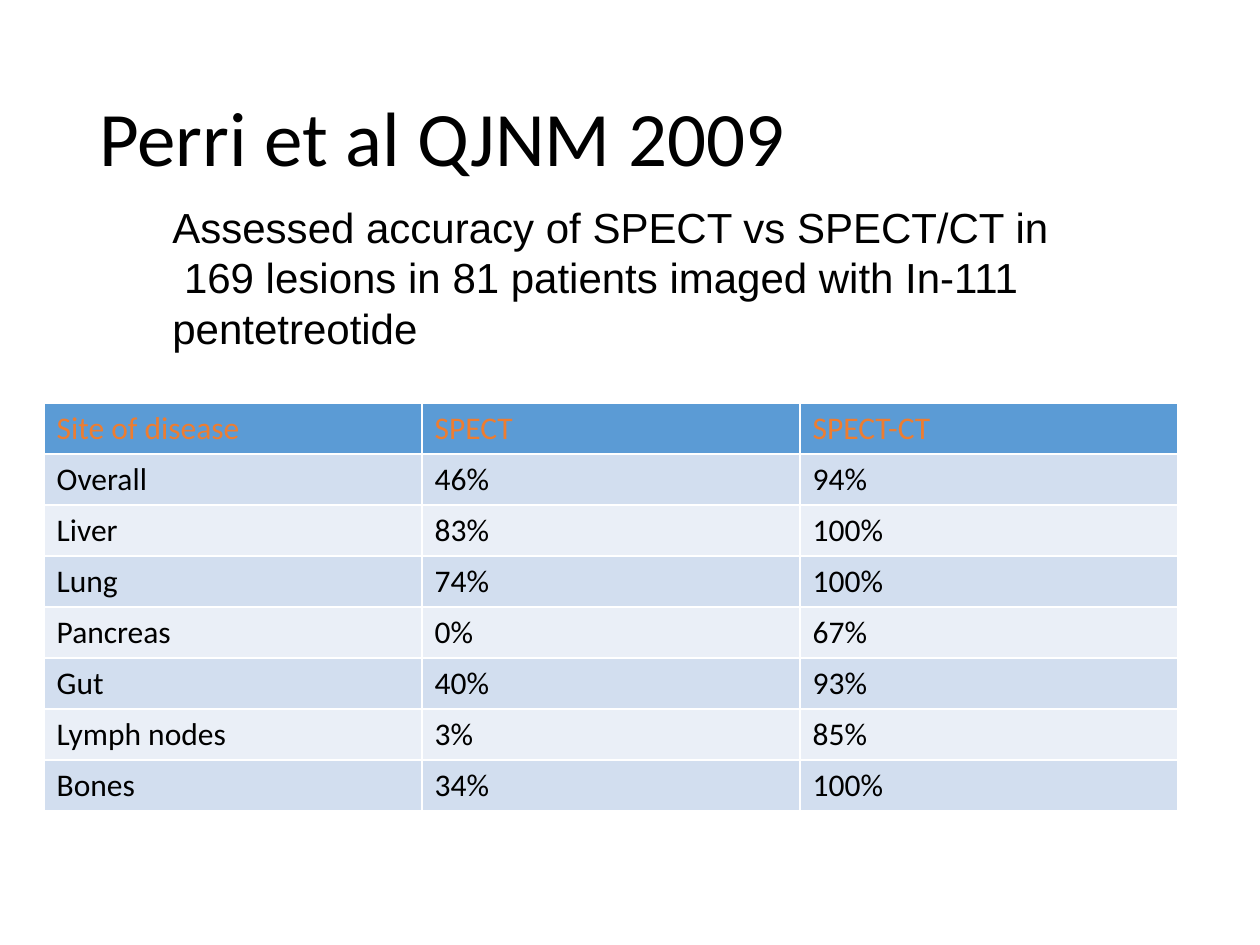
from dataclasses import dataclass

from pptx import Presentation
from pptx.dml.color import RGBColor
from pptx.enum.text import MSO_ANCHOR
from pptx.slide import Slide
from pptx.util import Inches, Pt


def rgb(value):
    return RGBColor.from_string(value)


@dataclass
class SlideBuilder:
    """Hold the style and the current slide, and add its elements."""

    s: Slide
    font: str = "Calibri"
    ink: str = "000000"
    accent: str = "ED7D31"
    header: str = "5B9BD5"
    bands: tuple = ("D2DEEF", "EAEFF7")

    def style(self, p, size, color, font=None):
        p.font.name = font or self.font
        p.font.size = Pt(size)
        p.font.bold = False
        p.font.color.rgb = rgb(color)

    def text(self, text, box, size, font=None, anchor=MSO_ANCHOR.TOP, spacing=1.0):
        tf = self.s.shapes.add_textbox(*map(Inches, box)).text_frame
        tf.word_wrap = True
        tf.vertical_anchor = anchor
        p = tf.paragraphs[0]
        p.text = text
        p.line_spacing = spacing
        self.style(p, size, self.ink, font)

    def table(self, rows, box):
        shape = self.s.shapes.add_table(len(rows), len(rows[0]), *map(Inches, box))
        for i, row in enumerate(rows):
            fill = self.bands[(i - 1) % 2] if i else self.header
            for j, value in enumerate(row):
                cell = shape.table.cell(i, j)
                cell.text = value
                cell.fill.solid()
                cell.fill.fore_color.rgb = rgb(fill)
                p = cell.text_frame.paragraphs[0]
                self.style(p, 18, self.ink if i else self.accent)


def main():
    prs = Presentation()
    prs.slide_width, prs.slide_height = Inches(10), Inches(7.5)
    slide = SlideBuilder(prs.slides.add_slide(prs.slide_layouts[6]))
    slide.text("Perri et al QJNM 2009", (0.69, 0.4, 8.62, 1.45), 44,
               anchor=MSO_ANCHOR.MIDDLE, spacing=0.9)
    accuracy = [
        ("Site of disease", "SPECT", "SPECT-CT"),
        ("Overall", "46%", "94%"),
        ("Liver", "83%", "100%"),
        ("Lung", "74%", "100%"),
        ("Pancreas", "0%", "67%"),
        ("Gut", "40%", "93%"),
        ("Lymph nodes", "3%", "85%"),
        ("Bones", "34%", "100%"),
    ]
    slide.table(accuracy, (0.35, 3.2, 9, 3.24))
    slide.text("Assessed accuracy of SPECT vs SPECT/CT in\v"
               " 169 lesions in 81 patients imaged with In-111 pentetreotide",
               (1.27, 1.55, 7.17, 1.31), 24, font="Arial")
    prs.save("out.pptx")


if __name__ == "__main__":
    main()
